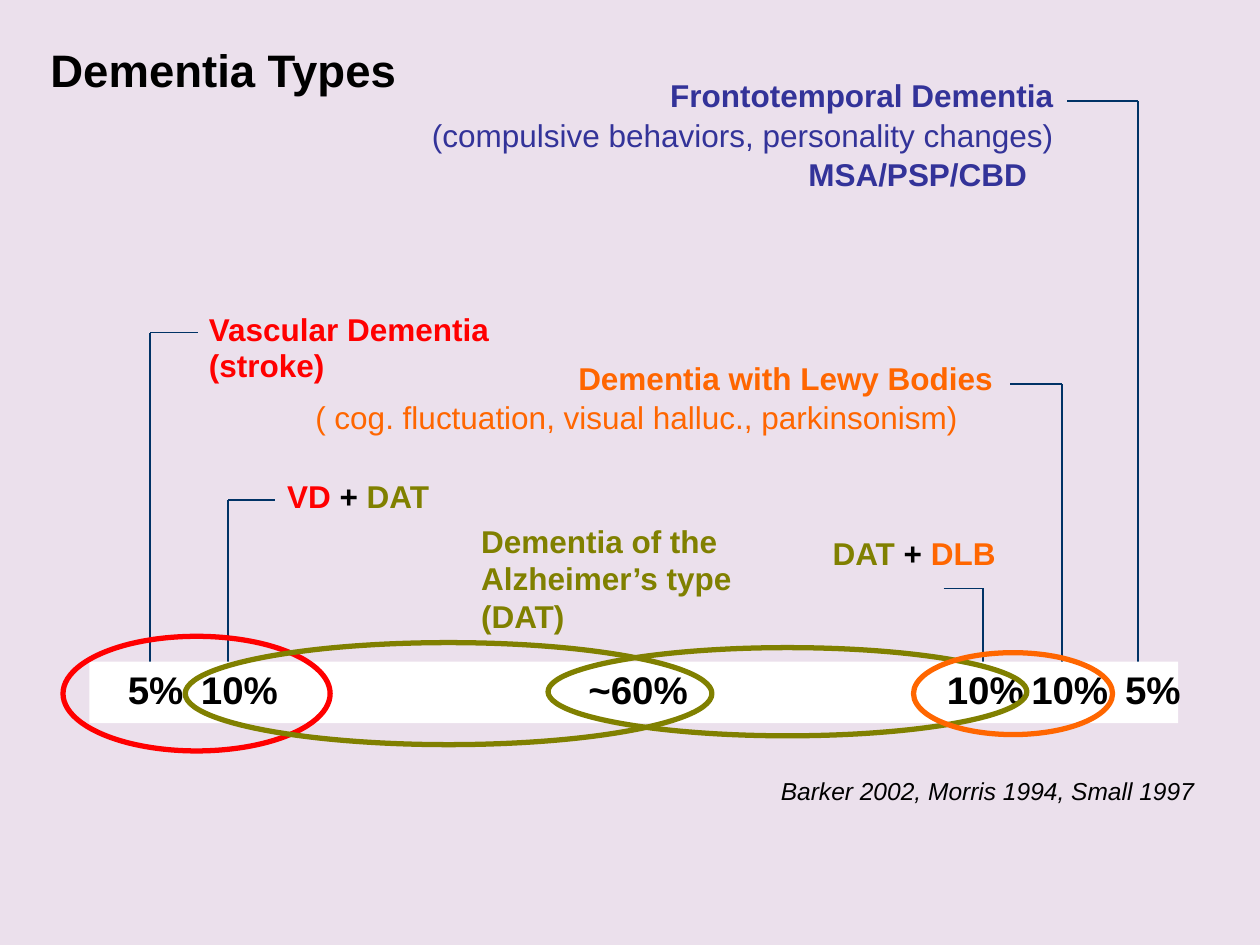
import pptx
import pptx.dml.color
import pptx.enum.shapes
import pptx.enum.text
import pptx.oxml.ns
import pptx.util
import lxml.etree

Inches, Pt = pptx.util.Inches, pptx.util.Pt
RGBColor = pptx.dml.color.RGBColor
SHAPE = pptx.enum.shapes.MSO_SHAPE
ALIGN = pptx.enum.text.PP_ALIGN
ANCHOR = pptx.enum.text.MSO_ANCHOR

LILAC = RGBColor(0xEB, 0xE0, 0xEC)
BLACK = RGBColor(0, 0, 0)
WHITE = RGBColor(0xFF, 0xFF, 0xFF)
NAVY = RGBColor(0x00, 0x33, 0x66)
INDIGO = RGBColor(0x33, 0x33, 0x99)
RED = RGBColor(0xFF, 0, 0)
ORANGE = RGBColor(0xFF, 0x66, 0x00)
OLIVE = RGBColor(0x80, 0x80, 0x00)

LABEL = {"size": Pt(18), "name": "Arial", "bold": True}
DETAIL = {**LABEL, "bold": False}
SHARE = {**LABEL, "size": Pt(22)}
SOURCE = {**DETAIL, "size": Pt(14), "italic": True}
TITLE = {**LABEL, "size": Pt(26)}


def set_attrs(obj, values):
    for name, value in values.items():
        setattr(obj, name, value)


def add_run(p, text, color, font):
    r = p.add_run()
    r.text = text
    set_attrs(r.font, font)
    r.font.color.rgb = color


def add_text(s, box, lines, align=ALIGN.LEFT, spacing=1.0, anchor=ANCHOR.TOP):
    sp = s.shapes.add_textbox(*map(Inches, box))
    tf = sp.text_frame
    set_attrs(tf, {"word_wrap": True, "vertical_anchor": anchor})
    for i, (runs, font, indent) in enumerate(lines):
        p = tf.add_paragraph() if i else tf.paragraphs[0]
        set_attrs(p, {"alignment": align, "line_spacing": spacing,
                      "space_before": Pt(1.8 if i else 0)})
        if indent:
            p._p.get_or_add_pPr().set("marR", str(Inches(indent)))
        for text, color in runs:
            add_run(p, text, color, font)


def add_title(s, box, text):
    sp = s.shapes.title
    set_attrs(sp, dict(zip(("left", "top", "width", "height"), map(Inches, box))))
    tf = sp.text_frame
    set_attrs(tf, {"word_wrap": True, "vertical_anchor": ANCHOR.BOTTOM,
                   "margin_left": 0, "margin_right": 0,
                   "margin_top": 0, "margin_bottom": 0})
    p = tf.paragraphs[0]
    set_attrs(p, {"alignment": ALIGN.LEFT, "line_spacing": 0.9})
    add_run(p, text, BLACK, TITLE)


def add_line(s, *ends):
    kind = pptx.enum.shapes.MSO_CONNECTOR.STRAIGHT
    line = s.shapes.add_connector(kind, *map(Inches, ends))
    line.line.color.rgb = NAVY
    line.line.width = Pt(1)
    lxml.etree.SubElement(line._element.spPr, pptx.oxml.ns.qn("a:effectLst"))


def add_leaders(s):
    for label_x, x, top, bottom in ((1.57, 1.19, 2.64, 5.56),
                                    (2.18, 1.81, 3.97, 5.56),
                                    (7.49, 7.8, 4.67, 5.64),
                                    (8.02, 8.43, 3.05, 5.48),
                                    (8.47, 9.03, 0.8, 5.64)):
        add_line(s, label_x, top, x, top)
        add_line(s, x, bottom, x, top)


def add_labels(s):
    add_text(s, (2.36, 2.82, 5.62, 0.71), [
        ([("Dementia with Lewy Bodies", ORANGE)], LABEL, 0),
        ([("( cog. fluctuation, visual halluc., parkinsonism)", ORANGE)], DETAIL, 0.28),
    ], ALIGN.RIGHT, 0.95)
    add_text(s, (2.83, 0.58, 5.63, 1.02), [
        ([("Frontotemporal Dementia", INDIGO)], LABEL, 0),
        ([("(compulsive behaviors, personality changes)", INDIGO)], DETAIL, 0),
        ([("MSA/PSP/CBD", INDIGO)], LABEL, 0.21),
    ], ALIGN.RIGHT, 0.95)
    for box, runs, align, spacing in (
        ((2.18, 3.76, 2.45, 0.39),
         [("VD", RED), (" + ", BLACK), ("DAT", OLIVE)], ALIGN.LEFT, 0.95),
        ((5.81, 4.21, 2.19, 0.39),
         [("DAT", OLIVE), (" + ", BLACK), ("DLB", ORANGE)], ALIGN.RIGHT, 0.95),
        ((1.56, 2.43, 2.56, 0.68),
         [("Vascular Dementia (stroke)", RED)], ALIGN.LEFT, 0.95),
        ((3.72, 4.09, 2.58, 1.01),
         [("Dementia of the Alzheimer’s type (DAT)", OLIVE)], ALIGN.LEFT, 1.0),
    ):
        add_text(s, box, [(runs, LABEL, 0)], align, spacing)


def add_share_bar(s, box):
    left, top, width, height = box
    bar = s.shapes.add_shape(SHAPE.RECTANGLE, *map(Inches, box))
    bar.shadow.inherit = False
    bar.fill.solid()
    bar.fill.fore_color.rgb = WHITE
    bar.line.fill.background()
    for text, x, w in (("5%", 0.15, 0.75), ("10%", 0.73, 0.92), ("~60%", 3.82, 1.07),
                       ("10%", 6.65, 0.92), ("10%", 7.32, 0.92), ("5%", 7.98, 0.92)):
        add_text(s, (left + x, top - 0.01, w, 0.47),
                 [([(text, BLACK)], SHARE, 0)], ALIGN.CENTER)


def add_ovals(s):
    for box, color in (((0.5, 5.05, 2.12, 0.91), RED),
                       ((1.47, 5.1, 4.18, 0.81), OLIVE),
                       ((4.35, 5.14, 3.8, 0.7), OLIVE),
                       ((7.25, 5.18, 1.58, 0.65), ORANGE)):
        sp = s.shapes.add_shape(SHAPE.OVAL, *map(Inches, box))
        sp.shadow.inherit = False
        sp.fill.background()
        sp.line.color.rgb = color
        sp.line.width = Pt(3)


def main():
    prs = pptx.Presentation()
    prs.slide_width, prs.slide_height = Inches(10), Inches(7.5)
    s = prs.slides.add_slide(prs.slide_layouts[5])
    s.background.fill.solid()
    s.background.fill.fore_color.rgb = LILAC
    add_title(s, (0.4, 0.06, 8.33, 0.71), "Dementia Types")
    add_text(s, (5.68, 5.94, 3.9, 0.5),
             [([("Barker 2002, Morris 1994, Small 1997", BLACK)], SOURCE, 0)],
             ALIGN.RIGHT, anchor=ANCHOR.BOTTOM)
    add_leaders(s)
    add_labels(s)
    add_share_bar(s, (0.71, 5.25, 8.64, 0.49))
    add_ovals(s)
    prs.save("out.pptx")


if __name__ == "__main__":
    main()
